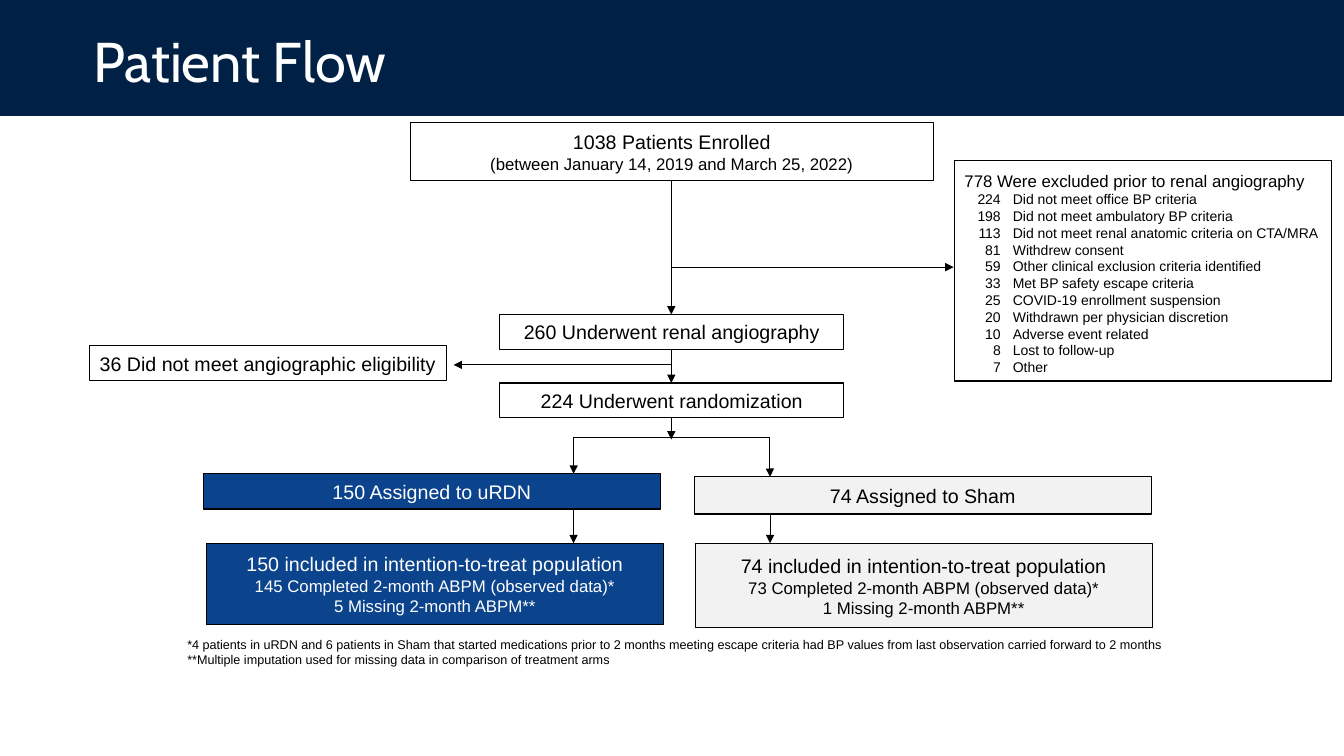
from lxml.etree import SubElement
from pptx import Presentation
from pptx.dml.color import RGBColor
from pptx.enum.shapes import MSO_CONNECTOR, MSO_SHAPE
from pptx.enum.text import MSO_ANCHOR, MSO_AUTO_SIZE, PP_ALIGN
from pptx.oxml.ns import qn
from pptx.util import Inches, Pt

CELL = Inches(0.1)
COLUMNS, ROWS = 133.33, 75
NAVY, BLUE, GRAY, WHITE, BLACK = "002045", "0B438C", "F2F2F2", "FFFFFF", "000000"
TRUNK, TREATED, SHAM = 66.6, 56.9, 76.4
SPLIT = 43.4


def cells(*counts):
    return [round(count * CELL) for count in counts]


def write(frame, lines, color, align=PP_ALIGN.LEFT, font="Arial"):
    for index, (text, size) in enumerate(lines):
        para = frame.paragraphs[0] if index == 0 else frame.add_paragraph()
        para.alignment = align
        span = para.add_run()
        span.text = text
        span.font.name = font
        span.font.size = Pt(size)
        span.font.color.rgb = RGBColor.from_string(color)


deck = Presentation()
deck.slide_width, deck.slide_height = cells(COLUMNS, ROWS)
page = deck.slides.add_slide(deck.slide_layouts[5])

band = page.shapes.add_shape(MSO_SHAPE.RECTANGLE, *cells(0, 0, COLUMNS, 11.5))
band.shadow.inherit = False
band.fill.solid()
band.fill.fore_color.rgb = RGBColor.from_string(NAVY)
band.line.fill.background()
page.shapes._spTree.insert(2, band._element)

title = page.shapes.title
title.left, title.top, title.width, title.height = cells(8.3, 1.2, 115, 10.3)
title.text_frame.auto_size = MSO_AUTO_SIZE.NONE
title.text_frame.vertical_anchor = MSO_ANCHOR.MIDDLE
write(title.text_frame, [("Patient Flow", 40)], WHITE, font="Cabin")
title.text_frame.paragraphs[0].line_spacing = 0.9

arrows = [
    (MSO_CONNECTOR.STRAIGHT, (TRUNK, 17.9), (TRUNK, 31.2)),
    (MSO_CONNECTOR.STRAIGHT, (TRUNK, 26.5), (94.6, 26.5)),
    (MSO_CONNECTOR.STRAIGHT, (TRUNK, 34.7), (TRUNK, 38)),
    (MSO_CONNECTOR.STRAIGHT, (TRUNK, 36.2), (45, 36.2)),
    (MSO_CONNECTOR.STRAIGHT, (TRUNK, 41.4), (TRUNK, 43.6)),
    (MSO_CONNECTOR.ELBOW, (TRUNK, SPLIT), (TREATED, 47)),
    (MSO_CONNECTOR.ELBOW, (TRUNK, SPLIT), (SHAM, 47.3)),
    (MSO_CONNECTOR.STRAIGHT, (TREATED, 50.6), (TREATED, 53.9)),
    (MSO_CONNECTOR.STRAIGHT, (SHAM, 50.9), (SHAM, 53.9)),
]
for kind, start, end in arrows:
    arrow = page.shapes.add_connector(kind, *cells(*start, *end))
    arrow.line.color.rgb = RGBColor.from_string(BLACK)
    arrow.line.width = Pt(0.75)
    properties = arrow._element.spPr
    SubElement(arrow.line._get_or_add_ln(), qn("a:tailEnd"), type="triangle")
    SubElement(properties, qn("a:effectLst"))
    if kind == MSO_CONNECTOR.ELBOW:
        guides = properties.find(qn("a:prstGeom")).get_or_add_avLst()
        SubElement(guides, qn("a:gd"), name="adj1", fmla="val 99800")

exclusions = [
    (224, "Did not meet office BP criteria"),
    (198, "Did not meet ambulatory BP criteria"),
    (113, "Did not meet renal anatomic criteria on CTA/MRA"),
    (81, "Withdrew consent"),
    (59, "Other clinical exclusion criteria identified"),
    (33, "Met BP safety escape criteria"),
    (25, "COVID-19 enrollment suspension"),
    (20, "Withdrawn per physician discretion"),
    (10, "Adverse event related"),
    (8, "Lost to follow-up"),
    (7, "Other"),
]
excluded = [("778 Were excluded prior to renal angiography", 12)]
excluded += [(f"\t{count}\t{reason}", 10) for count, reason in exclusions]

LEFT, CENTER = PP_ALIGN.LEFT, PP_ALIGN.CENTER
TOP, MIDDLE = MSO_ANCHOR.TOP, MSO_ANCHOR.MIDDLE
boxes = [
    ((40.7, 12.2, 51.9, 5.7), WHITE, BLACK, CENTER, MIDDLE,
     [("1038 Patients Enrolled", 14),
      ("(between January 14, 2019 and March 25, 2022)", 12)]),
    ((94.7, 15.9, 37.4, 21.9), WHITE, BLACK, LEFT, TOP, excluded),
    ((49.6, 31.2, 34.1, 3.5), WHITE, BLACK, CENTER, MIDDLE,
     [("260 Underwent renal angiography", 14)]),
    ((8.9, 34.3, 35.4, 3.5), WHITE, BLACK, LEFT, MIDDLE,
     [("36 Did not meet angiographic eligibility", 14)]),
    ((49.6, 38, 34.1, 3.4), WHITE, BLACK, CENTER, MIDDLE,
     [("224 Underwent randomization", 14)]),
    ((20.2, 47, 45.3, 3.5), BLUE, WHITE, CENTER, MIDDLE,
     [("150 Assigned to uRDN", 14)]),
    ((68.9, 47.3, 45.3, 3.7), GRAY, BLACK, CENTER, MIDDLE,
     [("74 Assigned to Sham", 14)]),
    ((20.5, 53.9, 45.3, 8.1), BLUE, WHITE, CENTER, MIDDLE,
     [("150 included in intention-to-treat population", 14),
      ("145 Completed 2-month ABPM (observed data)*", 12),
      ("5 Missing 2-month ABPM**", 12)]),
    ((69, 53.9, 45.3, 8.4), GRAY, BLACK, CENTER, MIDDLE,
     [("74 included in intention-to-treat population", 14),
      ("73 Completed 2-month ABPM (observed data)*", 12),
      ("1 Missing 2-month ABPM**", 12)]),
]
for place, fill, color, align, anchor, lines in boxes:
    box = page.shapes.add_shape(MSO_SHAPE.RECTANGLE, *cells(*place))
    box.shadow.inherit = False
    box.fill.solid()
    box.fill.fore_color.rgb = RGBColor.from_string(fill)
    box.line.color.rgb = RGBColor.from_string(BLACK)
    box.line.width = Pt(0.75)
    frame = box.text_frame
    frame.word_wrap = True
    frame.vertical_anchor = anchor
    frame.margin_left = frame.margin_right = CELL
    frame.margin_top = frame.margin_bottom = CELL
    write(frame, lines, color, align)
    if lines is excluded:
        for para in frame.paragraphs[1:]:
            stops = SubElement(para._p.get_or_add_pPr(), qn("a:tabLst"))
            for position, side in zip(cells(3.6, 4.8), "rl"):
                SubElement(stops, qn("a:tab"), pos=str(position), algn=side)

footnote = page.shapes.add_textbox(*cells(17.6, 62.7, 99.6, 4))
footnote.text_frame.word_wrap = False
write(footnote.text_frame, [
    ("*4 patients in uRDN and 6 patients in Sham that started medications prior to 2 months "
     "meeting escape criteria had BP values from last observation carried forward to 2 months", 9),
    ("**Multiple imputation used for missing data in comparison of treatment arms", 9),
], BLACK)

deck.save("out.pptx")
